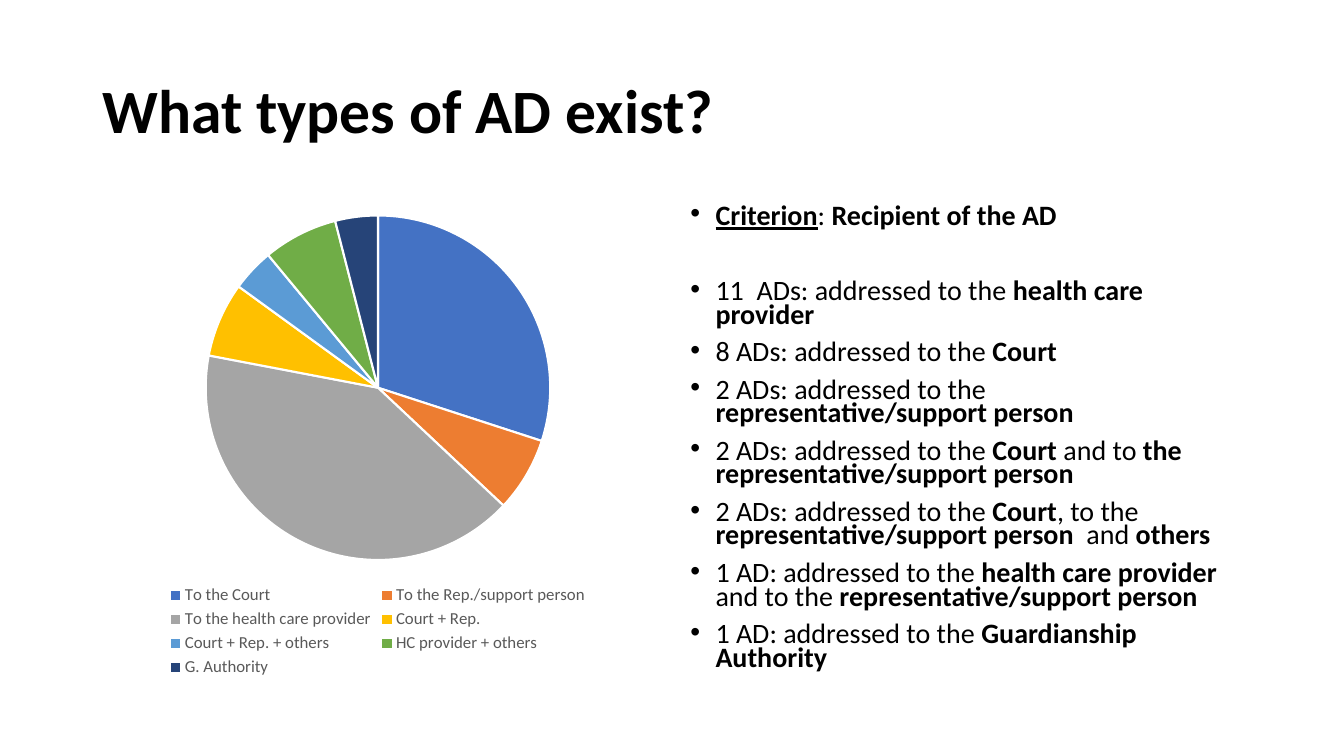
from lxml.etree import SubElement
from pptx import Presentation
from pptx.chart.data import CategoryChartData
from pptx.dml.color import RGBColor
from pptx.enum.chart import XL_CHART_TYPE, XL_LEGEND_POSITION
from pptx.enum.text import MSO_ANCHOR, MSO_AUTO_SIZE, PP_ALIGN
from pptx.oxml.ns import qn
from pptx.util import Pt

FACE = "Calibri"

# Recipient, share in percent, slice colour
RECIPIENTS = [
    ("To the Court", 30, "4472C4"),
    ("To the Rep./support person", 7, "ED7D31"),
    ("To the health care provider", 41, "A5A5A5"),
    ("Court + Rep.", 7, "FFC000"),
    ("Court + Rep. + others", 4, "5B9BD5"),
    ("HC provider + others", 7, "70AD47"),
    ("G. Authority", 4, "264478"),
]

# Each finding alternates plain and bold pieces, plain first
FINDINGS = [
    ["11  ADs: addressed to the ", "health care provider"],
    ["8 ADs: addressed to the ", "Court"],
    ["2 ADs: addressed to the ", "representative/support person"],
    ["2 ADs: addressed to the", " Court ", "and to ",
     "the representative/support person"],
    ["2 ADs: addressed to the ", "Court", ", to the ",
     "representative/support person  ", "and ", "others"],
    ["1 AD: addressed to the ", "health care provider ", "and to the ",
     "representative/support person"],
    ["1 AD: addressed to the ", "Guardianship Authority"],
]


def color(hex_code):
    return RGBColor.from_string(hex_code)


def style(font, size, hex_code="000000", **extra):
    for name, value in {"name": FACE, "size": Pt(size), **extra}.items():
        setattr(font, name, value)
    font.color.rgb = color(hex_code)


def place(shape, box):
    for side, value in zip(("left", "top", "width", "height"), box):
        setattr(shape, side, Pt(value))


def add_bullet(paragraph):
    props = paragraph._p.get_or_add_pPr()
    props.set("marL", str(Pt(18)))
    props.set("indent", str(-Pt(18)))
    SubElement(props, qn("a:buFont"), typeface="Arial")
    SubElement(props, qn("a:buChar"), char="•")


def fill_title(slide, box):
    title = slide.shapes.title
    place(title, box)
    frame = title.text_frame
    frame.text = "What types of AD exist?"
    frame.auto_size = MSO_AUTO_SIZE.NONE
    frame.vertical_anchor = MSO_ANCHOR.MIDDLE
    heading = frame.paragraphs[0]
    heading.alignment = PP_ALIGN.LEFT
    heading.line_spacing = 0.9
    style(heading.runs[0].font, 44, bold=True)


def add_recipient_pie(slide, box):
    names, shares, colors = zip(*RECIPIENTS)
    data = CategoryChartData()
    data.categories = names
    data.add_series("Series 1", shares)
    chart = slide.shapes.add_chart(
        XL_CHART_TYPE.PIE, *map(Pt, box), data).chart
    style(chart.font, 10)
    chart.has_title = False

    # Legend below the pie
    chart.has_legend = True
    chart.legend.position = XL_LEGEND_POSITION.BOTTOM
    chart.legend.include_in_layout = False
    style(chart.legend.font, 12, "595959")

    # Slices with white separators
    pie = chart.plots[0]
    pie.vary_by_categories = True
    for index, hex_code in enumerate(colors):
        slice_format = pie.series[0].points[index].format
        slice_format.fill.solid()
        slice_format.fill.fore_color.rgb = color(hex_code)
        slice_format.line.color.rgb = color("FFFFFF")
        slice_format.line.width = Pt(1.5)


def add_findings(slide, box):
    frame = slide.shapes.add_textbox(*map(Pt, box)).text_frame
    frame.word_wrap = True

    # Criterion line, then the findings after a wider gap
    criterion = [("Criterion", True, True), (": ", False, False),
                 ("Recipient of the AD", True, False)]
    lines = [criterion] + [
        [(piece, i % 2 == 1, False) for i, piece in enumerate(finding)]
        for finding in FINDINGS]
    gaps = [0, 37] + [10] * (len(lines) - 2)
    for number, (line, gap) in enumerate(zip(lines, gaps)):
        paragraph = frame.add_paragraph() if number else frame.paragraphs[0]
        add_bullet(paragraph)
        paragraph.line_spacing = 0.7
        paragraph.space_before = Pt(gap)
        for piece, bold, underline in line:
            run = paragraph.add_run()
            run.text = piece
            style(run.font, 20, bold=bold, underline=underline)


def main():
    deck = Presentation()
    deck.slide_width, deck.slide_height = Pt(960), Pt(540)
    slide = deck.slides.add_slide(deck.slide_layouts.get_by_name("Title Only"))

    margin, gutter, top, height = 66, 12, 144, 342.5
    content = 960 - 2 * margin
    column = (content - gutter) / 2
    fill_title(slide, (margin, 28.75, content, 104.4))
    add_recipient_pie(slide, (margin, top, column, height))
    add_findings(slide, (margin + column + gutter, top, column, height))
    deck.save("out.pptx")


if __name__ == "__main__":
    main()
